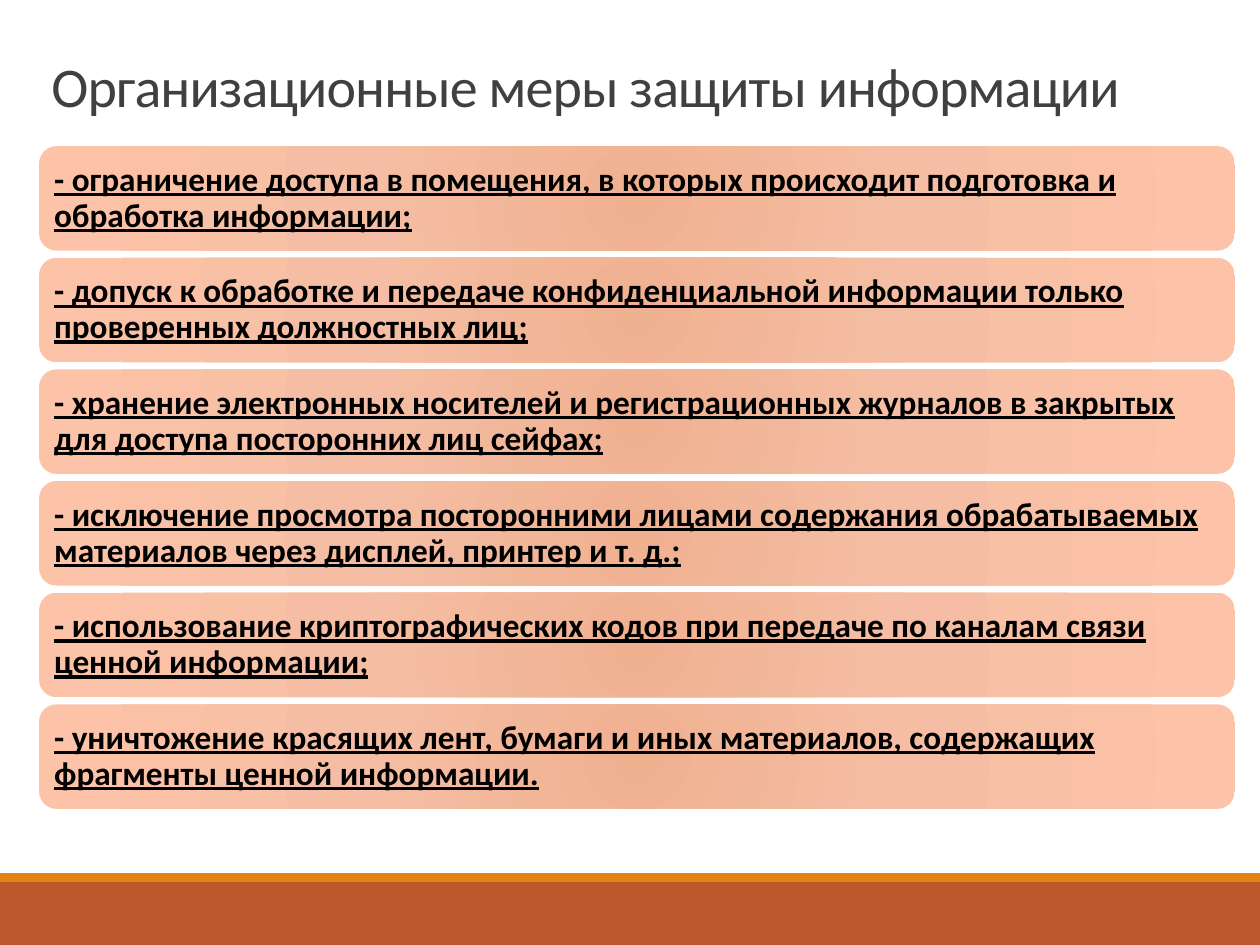
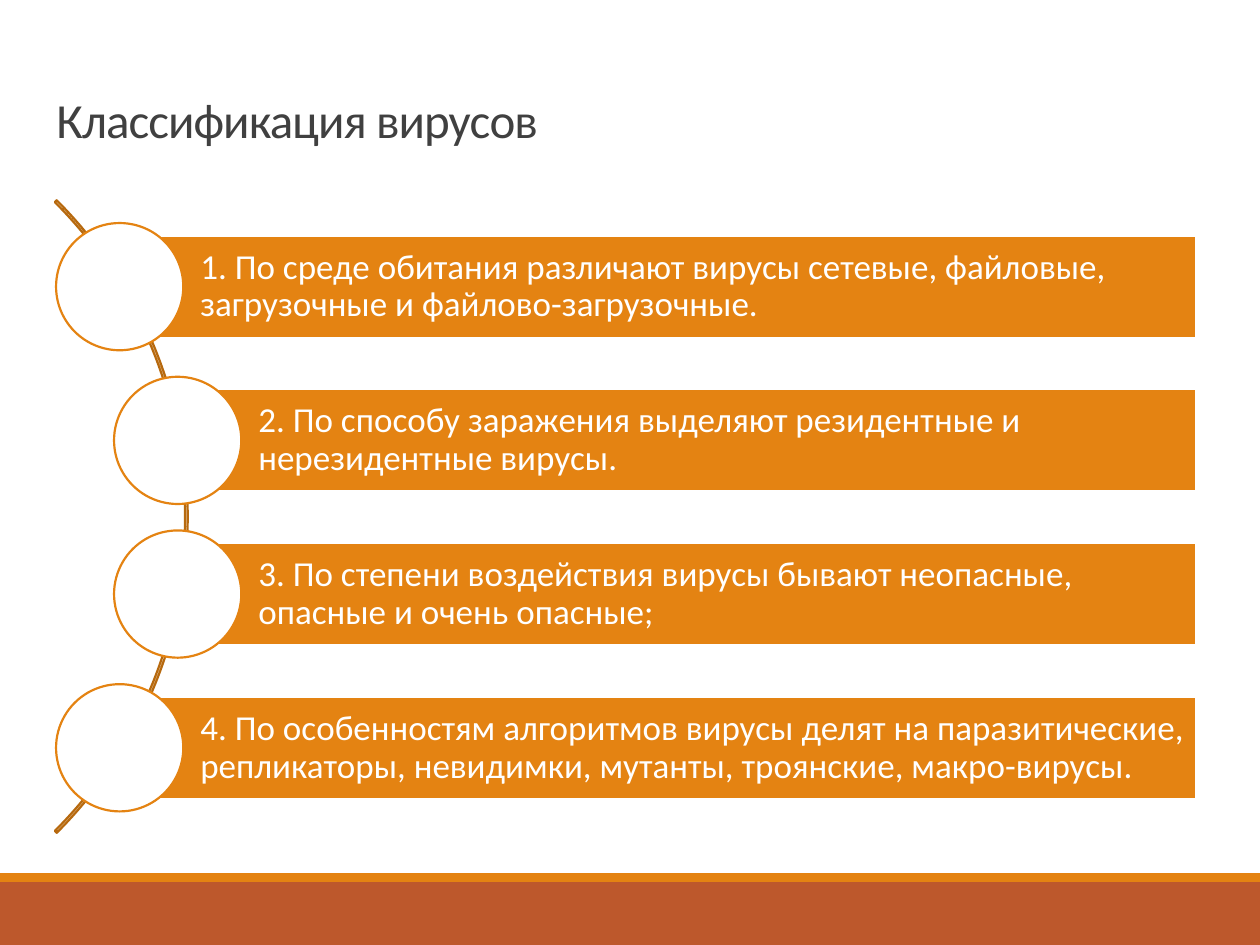
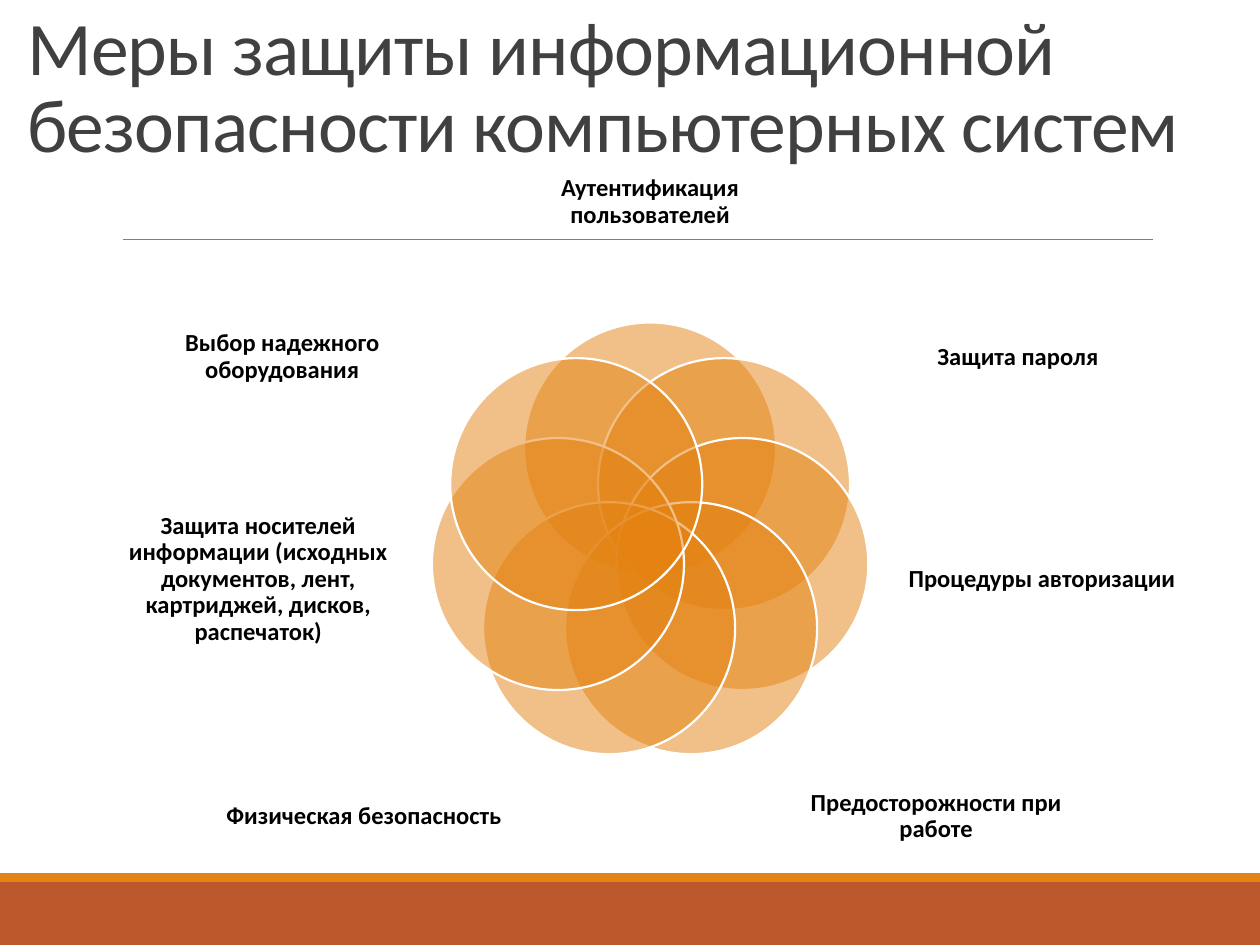
from dataclasses import dataclass
from math import cos, pi, sin
from typing import Any, NamedTuple, Optional

from pptx import Presentation
from pptx.dml.color import RGBColor
from pptx.enum.shapes import MSO_CONNECTOR, MSO_SHAPE as Preset
from pptx.enum.text import MSO_ANCHOR as Anchor, PP_ALIGN as Align
from pptx.oxml import parse_xml
from pptx.oxml.ns import nsdecls, qn
from pptx.oxml.xmlchemy import OxmlElement
from pptx.util import Inches, Pt


# Theme shared by all slides
@dataclass(frozen=True)
class Theme:
    font: str = "Calibri"
    band: str = "BD582C"
    accent: str = "E48312"
    arc: str = "B7690E"
    rule: str = "808080"
    title: str = "404040"
    dark: str = "000000"
    light: str = "FFFFFF"
    gradient: tuple = ((0, "F0B191"), (45, "F5BEA4"), (100, "FDC3A8"))
    outline: float = 1.25
    measure_size: float = 19
    virus_size: float = 20
    label_size: float = 14


THEME = Theme()


class Box(NamedTuple):
    left: float
    top: float
    width: float
    height: float


class TextStyle(NamedTuple):
    size: float
    color: str
    bold: bool = False
    underline: bool = False
    align: Align = Align.LEFT
    anchor: Anchor = Anchor.MIDDLE
    insets: tuple = (0, 0, 0, 0)
    line_spacing: float = 0.9
    tracking: float = 0


class Label(NamedTuple):
    text: str
    offset: float  # centre of the label from the axis of the flower
    top: float
    width: float
    height: float


MEASURES = (
    "- ограничение доступа в помещения, в которых происходит подготовка и обработка информации;",
    "- допуск к обработке и передаче конфиденциальной информации только проверенных должностных лиц;",
    "- хранение электронных носителей и регистрационных журналов в закрытых для доступа посторонних лиц сейфах;",
    "- исключение просмотра посторонними лицами содержания обрабатываемых материалов через дисплей, принтер и т. д.;",
    "- использование криптографических кодов при передаче по каналам связи ценной информации;",
    "- уничтожение красящих лент, бумаги и иных материалов, содержащих фрагменты ценной информации.",
)

VIRUS_CLASSES = (
    (0.95, "1. По среде обитания различают вирусы сетевые, файловые, загрузочные и файлово-загрузочные."),
    (1.41, "2. По способу заражения выделяют резидентные и нерезидентные вирусы."),
    (1.41, "3. По степени воздействия вирусы бывают неопасные, опасные и очень опасные;"),
    (0.95, "4. По особенностям алгоритмов вирусы делят на паразитические, репликаторы, "
           "невидимки, мутанты, троянские, макро-вирусы."),
)

SECURITY_LABELS = (
    Label("Аутентификация пользователей", 0, 0.99, 2.3, 1.23),
    Label("Защита пароля", 2.92, 2.16, 2.17, 1.35),
    Label("Процедуры авторизации", 3.11, 3.88, 2.13, 1.44),
    Label("Предосторожности при работе", 2.27, 5.82, 2.3, 1.32),
    Label("Физическая безопасность", -2.27, 5.82, 2.3, 1.32),
    Label("Защита носителей информации (исходных документов, лент, картриджей, дисков, распечаток)",
          -3.11, 3.88, 2.13, 1.44),
    Label("Выбор надежного оборудования", -2.92, 2.16, 2.17, 1.35),
)


# Drawing helpers
def apply_format(target: Any, values: dict) -> None:
    for name, value in values.items():
        setattr(target, name, value)


def write_text(shape: Any, text: str, style: TextStyle) -> None:
    frame = shape.text_frame
    margins = ("margin_left", "margin_top", "margin_right", "margin_bottom")
    apply_format(frame, {"word_wrap": True, "vertical_anchor": style.anchor}
                 | {side: Inches(inset) for side, inset in zip(margins, style.insets)})
    paragraph = frame.paragraphs[0]
    apply_format(paragraph, {"alignment": style.align, "line_spacing": style.line_spacing})
    run = paragraph.add_run()
    run.text = text
    apply_format(run.font, {"name": THEME.font, "size": Pt(style.size),
                            "bold": style.bold, "underline": style.underline})
    run.font.color.rgb = RGBColor.from_string(style.color)
    if style.tracking:
        run.font._element.set("spc", str(round(style.tracking * 100)))


def add_text(slide: Any, box: Box, text: str, style: TextStyle) -> None:
    write_text(slide.shapes.add_textbox(*map(Inches, box)), text, style)


def add_preset(slide: Any, preset: Preset, box: Box, fill: Optional[str] = None,
               line: Optional[str] = None, opacity: int = 100) -> Any:
    shape = slide.shapes.add_shape(preset, *map(Inches, box))
    shape.shadow.inherit = False
    if fill:
        shape.fill.solid()
        shape.fill.fore_color.rgb = RGBColor.from_string(fill)
    else:
        shape.fill.background()
    if opacity < 100:
        alpha = OxmlElement("a:alpha")
        alpha.set("val", str(opacity * 1000))
        shape._element.spPr.find(qn("a:solidFill"))[0].append(alpha)
    if line:
        shape.line.color.rgb = RGBColor.from_string(line)
        shape.line.width = Pt(THEME.outline)
    else:
        shape.line.fill.background()
    return shape


def fill_radial(shape: Any) -> None:
    stops = "".join(f'<a:gs pos="{position * 1000}"><a:srgbClr val="{color}"/></a:gs>'
                    for position, color in THEME.gradient)
    gradient = parse_xml(
        f'<a:gradFill {nsdecls("a")} rotWithShape="1"><a:gsLst>{stops}</a:gsLst>'
        '<a:path path="circle"><a:fillToRect l="100000" t="100000" r="100000" b="100000"/>'
        '</a:path></a:gradFill>')
    properties = shape._element.spPr
    properties.replace(properties.find(qn("a:noFill")), gradient)


def add_rule(slide: Any) -> None:
    rule = slide.shapes.add_connector(MSO_CONNECTOR.STRAIGHT, Inches(0.98), Inches(1.9),
                                      Inches(9.15), Inches(1.9))
    rule.line.color.rgb = RGBColor.from_string(THEME.rule)
    rule.line.width = Pt(0.5)
    rule._element.spPr.append(OxmlElement("a:effectLst"))


def start_slide(deck: Any, title: str, box: Box, size: float, ruled: bool = False) -> Any:
    slide = deck.slides.add_slide(deck.slide_layouts[6])
    add_preset(slide, Preset.RECTANGLE, Box(0, 7, 10, 0.5), THEME.band)
    add_preset(slide, Preset.RECTANGLE, Box(0, 6.93, 10, 0.07), THEME.accent)
    if ruled:
        add_rule(slide)
    add_text(slide, box, title,
             TextStyle(size, THEME.title, anchor=Anchor.BOTTOM, insets=(0.1, 0.05, 0.1, 0.05),
                       line_spacing=0.85, tracking=-0.5))
    return slide


# Slides
def build_measures(deck: Any) -> None:
    slide = start_slide(deck, "Организационные меры защиты информации",
                        Box(0.31, -0.11, 9.37, 1.1), 32)
    style = TextStyle(THEME.measure_size, THEME.dark, bold=True, underline=True,
                      insets=(0.08,) * 4)
    top, step = 1.16, 0.886
    for row, measure in enumerate(MEASURES):
        card = add_preset(slide, Preset.ROUNDED_RECTANGLE,
                          Box(0.31, top + row * step, 9.49, 0.83))
        fill_radial(card)
        write_text(card, measure, style)


def build_virus_classes(deck: Any) -> None:
    slide = start_slide(deck, "Классификация вирусов", Box(0.35, 0.36, 9.37, 0.87), 28)
    arc = add_preset(slide, Preset.BLOCK_ARC, Box(-5.61, 0.55, 7.1, 7.1), line=THEME.arc)
    for index, value in enumerate((189, 27, 0.003)):
        arc.adjustments[index] = value

    style = TextStyle(THEME.virus_size, THEME.light, insets=(0.64, 0.06, 0.06, 0.06))
    top, step, height, right, diameter = 1.87, 1.22, 0.81, 9.49, 1.01
    for row, (left, virus_class) in enumerate(VIRUS_CLASSES):
        bar_top = top + row * step
        bar = add_preset(slide, Preset.RECTANGLE, Box(left, bar_top, right - left, height),
                         THEME.accent, THEME.light)
        write_text(bar, virus_class, style)
        add_preset(slide, Preset.OVAL,
                   Box(left - diameter / 2, bar_top + (height - diameter) / 2, diameter, diameter),
                   THEME.light, THEME.accent)


def build_security(deck: Any) -> None:
    slide = start_slide(deck, "Меры защиты информационной безопасности компьютерных систем",
                        Box(0.12, 0.46, 9.76, 0.92), 43.2, ruled=True)
    style = TextStyle(THEME.label_size, THEME.dark, bold=True, align=Align.CENTER)
    center_x, center_y, orbit, radius = 5.16, 4.31, 0.75, 1
    for index, label in enumerate(SECURITY_LABELS):
        angle = 2 * pi * index / len(SECURITY_LABELS)
        petal = Box(center_x + orbit * sin(angle) - radius,
                    center_y - orbit * cos(angle) - radius, 2 * radius, 2 * radius)
        add_preset(slide, Preset.OVAL, petal, THEME.accent, THEME.light, opacity=50)
        left = center_x + label.offset - label.width / 2
        add_text(slide, Box(left, label.top, label.width, label.height), label.text, style)


def main() -> None:
    deck = Presentation()
    deck.slide_width, deck.slide_height = Inches(10), Inches(7.5)
    build_measures(deck)
    build_virus_classes(deck)
    build_security(deck)
    deck.save("out.pptx")


if __name__ == "__main__":
    main()
